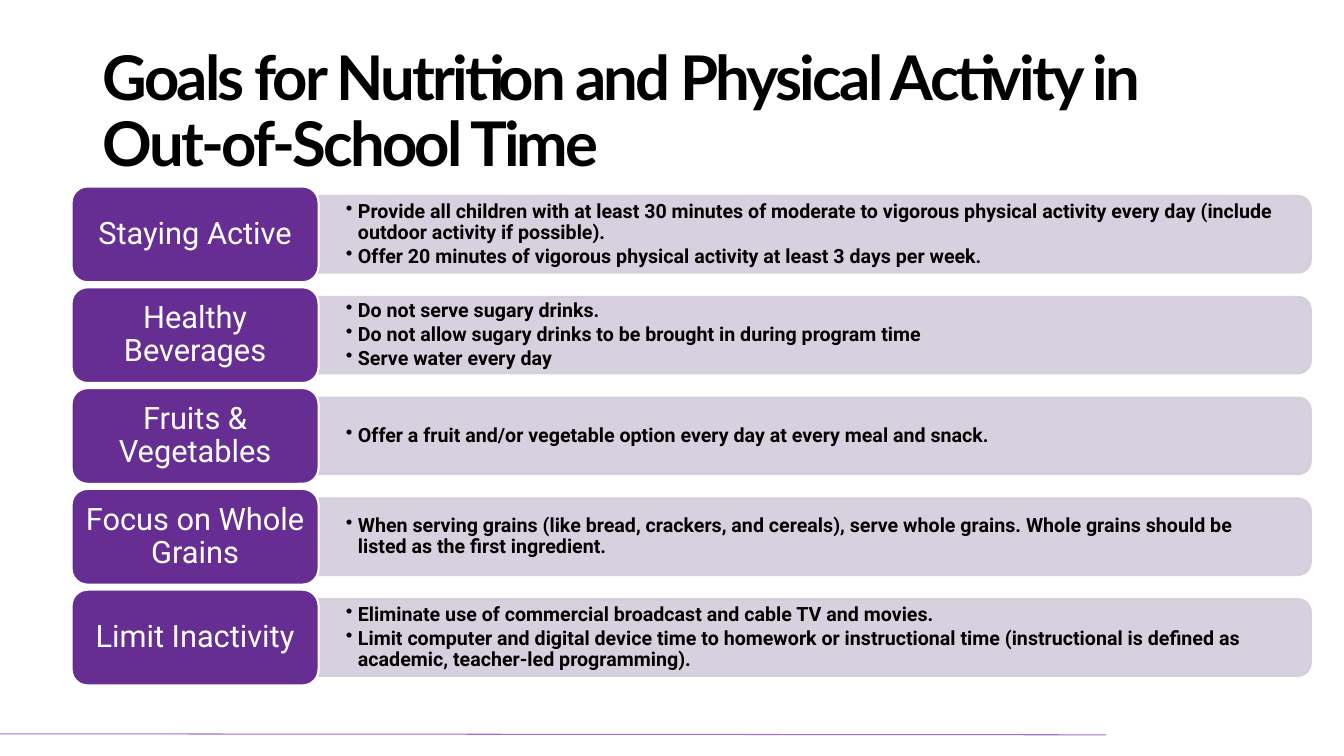
from lxml import etree
from pptx import Presentation, util as u
from pptx.dml.color import RGBColor
from pptx.enum import shapes, text
from pptx.oxml.ns import qn

GOALS = [
    ("Staying Active", [
        "Provide all children with at least 30 minutes of moderate to vigorous physical activity "
        "every day (include outdoor activity if possible).",
        "Offer 20 minutes of vigorous physical activity at least 3 days per week."]),
    ("Healthy Beverages", [
        "Do not serve sugary drinks.",
        "Do not allow sugary drinks to be brought in during program time",
        "Serve water every day"]),
    ("Fruits & Vegetables", [
        "Offer a fruit and/or vegetable option every day at every meal and snack."]),
    ("Focus on Whole Grains", [
        "When serving grains (like bread, crackers, and cereals), serve whole grains. "
        "Whole grains should be listed as the first ingredient."]),
    ("Limit Inactivity", [
        "Eliminate use of commercial broadcast and cable TV and movies.",
        "Limit computer and digital device time to homework or instructional time "
        "(instructional is defined as academic, teacher-led programming)."]),
]


def rgb(value):
    return RGBColor.from_string(value)


def sub(parent, tag, **attrs):
    """Append a DrawingML element to parent."""
    return etree.SubElement(parent, qn(tag), attrs)


class GoalSlide:
    FORMATS = {
        "title": dict(name="Lato", size=u.Pt(44), bold=True),
        "label": dict(name="Roboto", size=u.Pt(22), bold=False),
        "bullet": dict(name="Roboto", size=u.Pt(14), bold=True),
    }
    INK = {"title": "000000", "label": "FFFFFF", "bullet": "000000"}
    AFTER = {"title": 0, "label": 7.7, "bullet": 2.1}
    PURPLE, LILAC, RULE, WHITE = "662E93", "D3CDDC", "A56ED2", "FFFFFF"
    LEFT, SPLIT, RIGHT = 0.71, 3.16, 13
    TOP, PITCH, LABEL_H, BAND_H, TEXT_H = 1.85, 1, 0.95, 0.76, 0.69

    def __init__(self, prs):
        self.s = prs.slides.add_slide(prs.slide_layouts[6])

    def set_text(self, sp, style, lines, insets):
        tf = sp.text_frame
        tf.word_wrap = True
        tf.vertical_anchor = text.MSO_ANCHOR.MIDDLE
        tf.margin_left = tf.margin_right = u.Inches(insets[0])
        tf.margin_top = tf.margin_bottom = u.Inches(insets[1])
        for i, line in enumerate(lines):
            p = tf.paragraphs[0] if i == 0 else tf.add_paragraph()
            p.line_spacing = 0.9
            p.space_after = u.Pt(self.AFTER[style])
            p.alignment = text.PP_ALIGN.CENTER if style == "label" else text.PP_ALIGN.LEFT
            if style == "bullet":
                pPr = p._p.get_or_add_pPr()
                indent = u.Inches(0.12)
                pPr.set("marL", str(indent))
                pPr.set("indent", str(-indent))
                sub(pPr, "a:buChar", char="•")
            r = p.add_run()
            r.text = line
            for key, value in self.FORMATS[style].items():
                setattr(r.font, key, value)
            r.font.color.rgb = rgb(self.INK[style])
            if style == "title":
                r._r.get_or_add_rPr().set("spc", "-200")

    def box(self, x, y, w, h, style, lines, insets):
        sp = self.s.shapes.add_textbox(*map(u.Inches, (x, y, w, h)))
        self.set_text(sp, style, lines, insets)

    def shape(self, kind, x, y, w, h, fill, line):
        sp = self.s.shapes.add_shape(kind, *map(u.Inches, (x, y, w, h)))
        sp.shadow.inherit = False
        sp.fill.solid()
        sp.fill.fore_color.rgb = rgb(fill)
        sp.line.color.rgb = rgb(line)
        sp.line.width = u.Pt(1.5)
        return sp

    def band(self, x, y, w, h):
        """Draw a translucent bar rounded on its right: a tall tab turned by 90 degrees."""
        sp = self.shape(shapes.MSO_SHAPE.ROUND_2_SAME_RECTANGLE,
                        x + (w - h) / 2, y + (h - w) / 2, h, w, self.LILAC, self.LILAC)
        sp.rotation = 90
        for clr in sp._element.spPr.iter(qn("a:srgbClr")):
            sub(clr, "a:alpha", val="90000")

    def goal(self, row, label, bullets):
        y = self.TOP + row * self.PITCH
        middle = y + self.LABEL_H / 2
        w = self.RIGHT - self.SPLIT
        self.band(self.SPLIT, middle - self.BAND_H / 2, w, self.BAND_H)
        self.box(self.SPLIT, middle - self.TEXT_H / 2, w - 0.03, self.TEXT_H,
                 "bullet", bullets, (0.27, 0.14))
        sp = self.shape(shapes.MSO_SHAPE.ROUNDED_RECTANGLE, self.LEFT, y,
                        self.SPLIT - self.LEFT, self.LABEL_H, self.PURPLE, self.WHITE)
        self.set_text(sp, "label", [label], (0.09, 0.05))

    def rule(self, x1, y1, x2, y2):
        c = self.s.shapes.add_connector(shapes.MSO_CONNECTOR.STRAIGHT,
                                        *map(u.Inches, (x1, y1, x2, y2)))
        c.line.color.rgb = rgb(self.RULE)
        c.line.width = u.Pt(0.75)
        sub(c._element.spPr, "a:effectLst")


def main():
    prs = Presentation()
    prs.slide_width, prs.slide_height = u.Inches(13.33), u.Inches(7.5)
    slide = GoalSlide(prs)
    slide.rule(10.97, 7.29, 0, 7.28)
    slide.box(0.92, 0.4, 11.5, 1.45, "title",
              ["Goals for Nutrition and Physical Activity in Out-of-School Time"], (0.1, 0.05))
    for row, (label, bullets) in enumerate(GOALS):
        slide.goal(row, label, bullets)
    prs.save("out.pptx")


if __name__ == "__main__":
    main()
